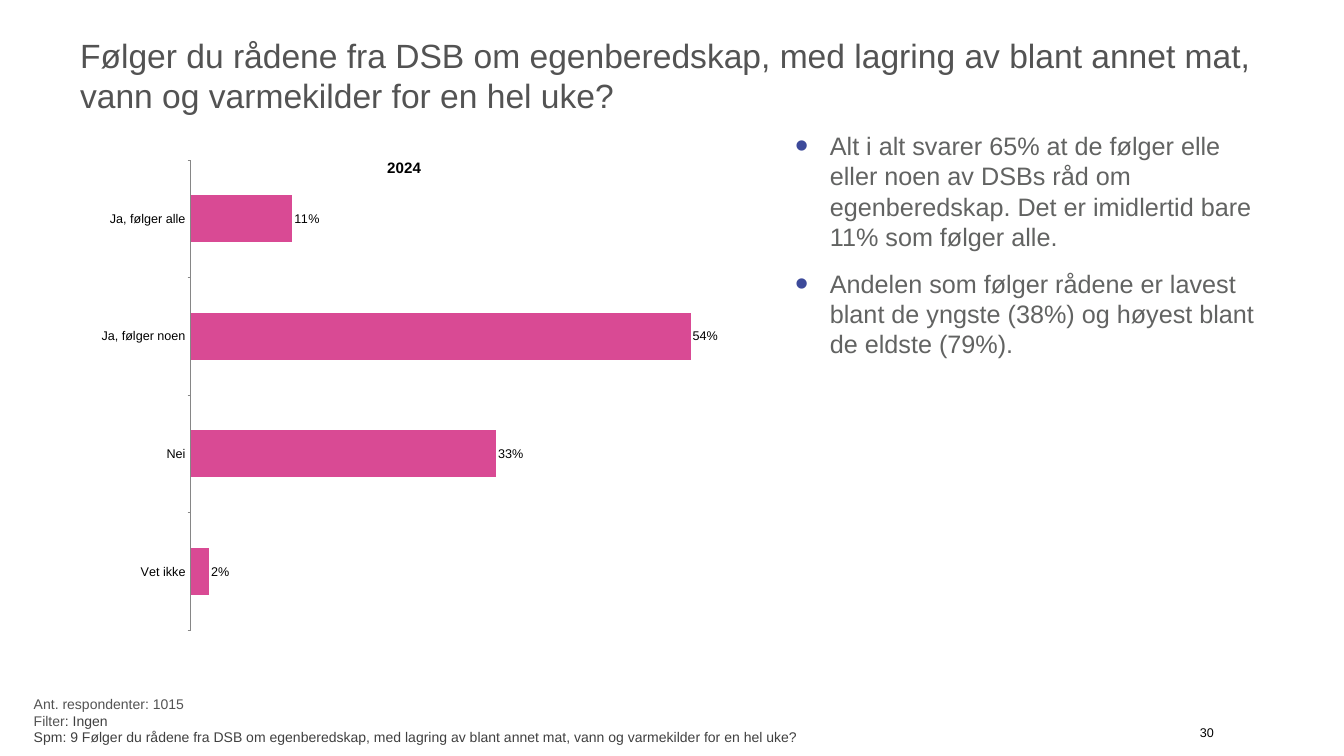
from lxml import etree
from pptx import Presentation
from pptx.chart.data import CategoryChartData
from pptx.dml.color import RGBColor
from pptx.enum.chart import XL_CHART_TYPE, XL_LABEL_POSITION, XL_TICK_MARK
from pptx.enum.text import MSO_ANCHOR, PP_ALIGN
from pptx.oxml import parse_xml
from pptx.oxml.ns import nsdecls, qn
from pptx.util import Inches, Pt

BLACK = RGBColor(0x00, 0x00, 0x00)
TITLE_GREY = RGBColor(0x53, 0x53, 0x53)
DARK_GREY = RGBColor(0x40, 0x40, 0x40)
BODY_GREY = RGBColor(0x62, 0x63, 0x62)
AXIS_GREY = RGBColor(0x86, 0x86, 0x86)
PINK = RGBColor(0xD9, 0x4A, 0x94)
BULLET_BLUE = RGBColor(0x3D, 0x4A, 0x9A)


def add_box(left, top, width, height, inset, anchor=MSO_ANCHOR.TOP, wrap=True):
    tf = s.shapes.add_textbox(Inches(left), Inches(top), Inches(width), Inches(height)).text_frame
    tf.word_wrap = wrap
    tf.vertical_anchor = anchor
    tf.margin_left = tf.margin_right = Inches(inset)
    tf.margin_top = tf.margin_bottom = Inches(min(inset, 0.06))
    return tf


def add_run(p, text, size, color):
    r = p.add_run()
    r.text = text
    r.font.name = "Arial"
    r.font.size = Pt(size)
    r.font.color.rgb = color


prs = Presentation()
prs.slide_width = Inches(26.67)
prs.slide_height = Inches(15)
s = prs.slides.add_slide(prs.slide_layouts[6])

tf = add_box(1.53, 0.47, 23.66, 2.04, 0.06, MSO_ANCHOR.MIDDLE)
add_run(tf.paragraphs[0], "Følger du rådene fra DSB om egenberedskap, med lagring av blant annet mat, vann og varmekilder for en hel uke?", 48, TITLE_GREY)

tf = add_box(23.74, 14.32, 0.42, 0.42, 0.06, wrap=False)
tf.paragraphs[0].alignment = PP_ALIGN.CENTER
add_run(tf.paragraphs[0], "30", 18, BLACK)

footer = [
    [("Ant. respondenter: 1015", TITLE_GREY)],
    [("Filter", TITLE_GREY), (": Ingen", DARK_GREY)],
    [("Spm: 9 Følger du rådene fra DSB om egenberedskap, med lagring av blant annet mat, vann og varmekilder for en hel uke?", DARK_GREY)],
]
tf = add_box(0.61, 13.86, 23.66, 0.87, 0.06, MSO_ANCHOR.MIDDLE)
for i, runs in enumerate(footer):
    p = tf.add_paragraph() if i else tf.paragraphs[0]
    for text, color in runs:
        add_run(p, text, 20, color)

findings = [
    "Alt i alt svarer 65% at de følger elle eller noen av DSBs råd om egenberedskap. Det er imidlertid bare 11% som følger alle.",
    "Andelen som følger rådene er lavest blant de yngste (38%) og høyest blant de eldste (79%).",
]
tf = add_box(15.68, 2.53, 9.56, 10.79, 0.1)
for i, text in enumerate(findings):
    p = tf.add_paragraph() if i else tf.paragraphs[0]
    pPr = p._p.get_or_add_pPr()
    pPr.set("marL", str(Inches(0.69)))
    pPr.set("indent", str(-Inches(0.69)))
    clr = etree.SubElement(pPr, qn("a:buClr"))
    etree.SubElement(clr, qn("a:srgbClr"), val=str(BULLET_BLUE))
    etree.SubElement(pPr, qn("a:buSzPct"), val="150000")
    etree.SubElement(pPr, qn("a:buFont"), typeface="Arial")
    etree.SubElement(pPr, qn("a:buChar"), char="•")
    if i:
        p.space_before = Pt(18)
    p.space_after = Pt(6)
    add_run(p, text, 36, BODY_GREY)

data = CategoryChartData(number_format="0%")
data.categories = ["Ja, følger alle", "Ja, følger noen", "Nei", "Vet ikke"]
data.add_series("2024", [0.11, 0.54, 0.33, 0.02])
chart = s.shapes.add_chart(XL_CHART_TYPE.BAR_CLUSTERED, Inches(0.61), Inches(2.82), Inches(14.82), Inches(10.8), data).chart
chart.font.name = "Arial"
chart.font.size = Pt(18)
chart.font.color.rgb = BLACK
chart.has_legend = False

chart.has_title = True
p = chart.chart_title.text_frame.paragraphs[0]
add_run(p, "2024", 21.6, BLACK)
p.runs[0].font.bold = True

axis = chart.category_axis
axis.reverse_order = True
axis.has_major_gridlines = False
axis.major_tick_mark = XL_TICK_MARK.OUTSIDE
axis.format.line.color.rgb = AXIS_GREY
axis = chart.value_axis
axis.visible = False
axis.has_major_gridlines = False
axis.minimum_scale = 0
axis.maximum_scale = 0.6

plot = chart.plots[0]
plot.gap_width = 150
plot.overlap = -20
plot.vary_by_categories = False
fill = plot.series[0].format.fill
fill.solid()
fill.fore_color.rgb = PINK
plot.has_data_labels = True
labels = plot.data_labels
labels.show_value = True
labels.number_format = "0%"
labels.number_format_is_linked = False
labels.position = XL_LABEL_POSITION.OUTSIDE_END

area = chart._chartSpace.chart.plotArea
for old in area.findall(qn("c:layout")):
    area.remove(old)
area.insert(0, parse_xml(
    f'<c:layout {nsdecls("c")}><c:manualLayout><c:layoutTarget val="inner"/>'
    '<c:xMode val="edge"/><c:yMode val="edge"/><c:x val="0.214"/><c:y val="0.033"/>'
    '<c:w val="0.744"/><c:h val="0.864"/></c:manualLayout></c:layout>'))

prs.save("out.pptx")
